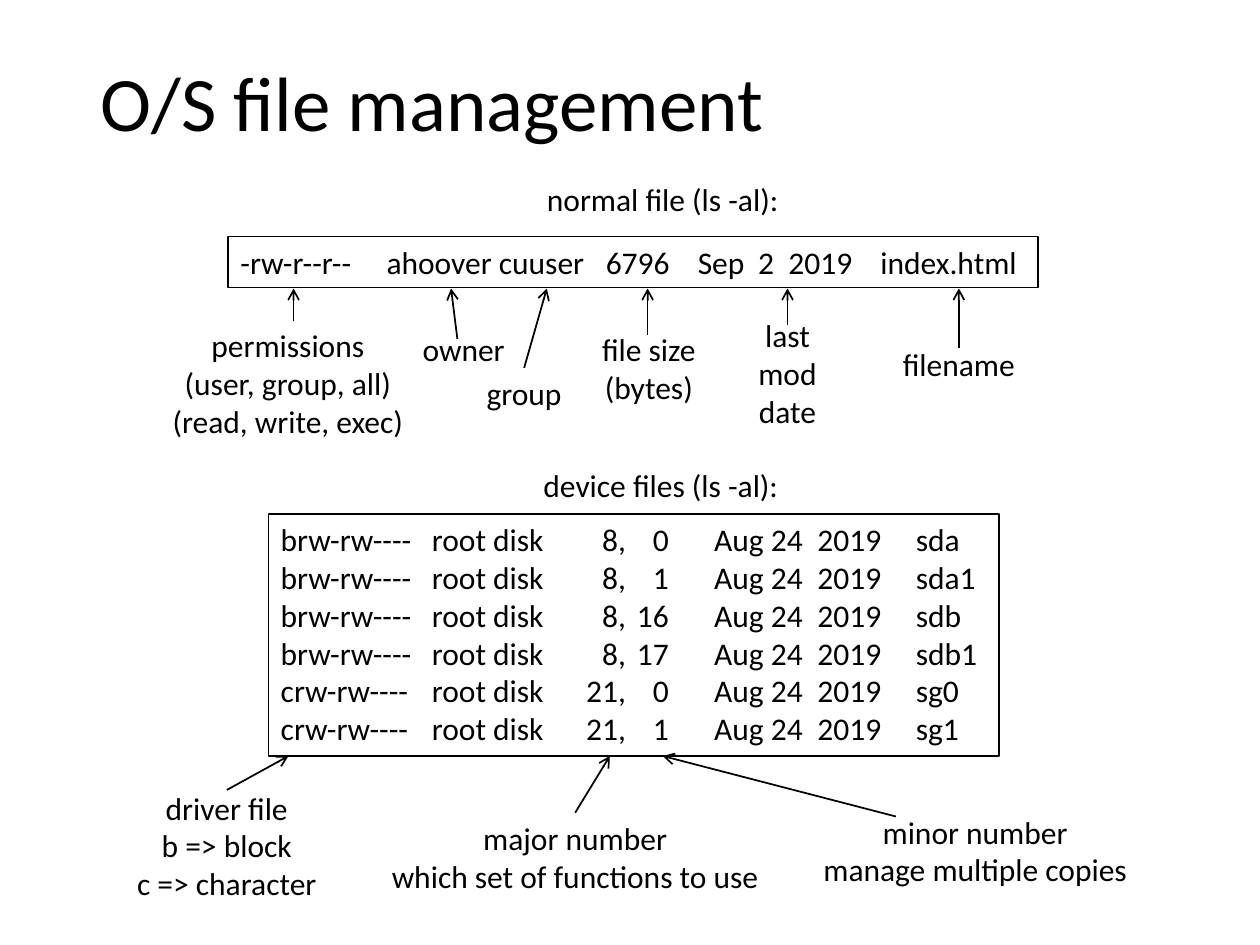
from lxml.etree import SubElement
from pptx import Presentation
from pptx.dml.color import RGBColor
from pptx.enum.shapes import MSO_CONNECTOR, MSO_SHAPE
from pptx.enum.text import MSO_ANCHOR, PP_ALIGN
from pptx.oxml.ns import qn
from pptx.util import Inches, Pt

FONT = "Calibri"
BLACK = "000000"
TITLE = "O/S file management"

# Heading, heading place, listing place, tab stops (inches, alignment), rows
LISTINGS = [
    ("normal file (ls -al):", (4.23, 1.38, 2.06, 0.4), (1.81, 1.88, 6.43, 0.4),
     [(1.16, "l"), (2.9, "l"), (3.63, "l"), (4.11, "l"), (4.35, "l"), (5.08, "l")],
     [("-rw-r--r--", "ahoover cuuser", "6796", "Sep", "2", "2019", "index.html")]),
    ("device files (ls -al):", (4.2, 3.65, 2.09, 0.4), (2.13, 4.08, 5.8, 1.92),
     [(1.2, "l"), (2.74, "r"), (3.08, "r"), (3.44, "l"), (4.26, "l"), (5.04, "l")],
     [("brw-rw----", "root disk", "8,", "0", "Aug 24", "2019", "sda"),
      ("brw-rw----", "root disk", "8,", "1", "Aug 24", "2019", "sda1"),
      ("brw-rw----", "root disk", "8,", "16", "Aug 24", "2019", "sdb"),
      ("brw-rw----", "root disk", "8,", "17", "Aug 24", "2019", "sdb1"),
      ("crw-rw----", "root disk", "21,", "0", "Aug 24", "2019", "sg0"),
      ("crw-rw----", "root disk", "21,", "1", "Aug 24", "2019", "sg1")]),
]

# Label lines, label place, arrow start (None: top middle of the label), arrow tip
ANNOTATIONS = [
    (["permissions", "(user, group, all)", "(read, write, exec)"],
     (1.26, 2.54, 2.05, 1.01), (2.33, 2.55), (2.33, 2.29)),
    (["owner"], (3.25, 2.57, 0.86, 0.4), (3.63, 2.69), (3.58, 2.29)),
    (["group"], (3.76, 2.92, 0.8, 0.4), None, (4.34, 2.29)),
    (["file size", "(bytes)"], (4.67, 2.57, 0.96, 0.71), (5.14, 2.66), (5.14, 2.29)),
    (["last", "mod", "date"], (5.91, 2.46, 0.68, 1.01), (6.25, 2.58), (6.25, 2.29)),
    (["filename"], (7.06, 2.69, 1.1, 0.4), (7.61, 2.76), (7.61, 2.29)),
    (["driver file", "b => block", "c => character"],
     (0.98, 6.21, 1.64, 1.01), (1.8, 6.27), (2.29, 6)),
    (["major number", "which set of functions to use"],
     (2.99, 6.45, 3.15, 0.71), None, (4.84, 6)),
    (["minor number", "manage multiple copies"],
     (6.42, 6.4, 2.64, 0.71), (7.11, 6.48), (5.26, 6)),
]


def color(hex_code):
    return RGBColor.from_string(hex_code)


def inches(values):
    return [Inches(value) for value in values]


def write(frame, lines, size=18, align=PP_ALIGN.CENTER):
    frame.word_wrap = False
    frame.text = "\n".join(lines)
    for paragraph in frame.paragraphs:
        paragraph.alignment = align
        paragraph.font.name = FONT
        paragraph.font.size = Pt(size)
        paragraph.font.color.rgb = color(BLACK)


def add_label(slide, lines, place):
    label = slide.shapes.add_textbox(*inches(place))
    write(label.text_frame, lines)
    return label


def set_tabs(paragraph, tabs):
    properties = paragraph._p.get_or_add_pPr()
    tab_list = SubElement(properties, qn("a:tabLst"))
    properties.insert(0, tab_list)
    for position, align in tabs:
        SubElement(tab_list, qn("a:tab"), pos=str(Inches(position)), algn=align)


def add_listing(slide, place, tabs, rows):
    box = slide.shapes.add_shape(MSO_SHAPE.RECTANGLE, *inches(place))
    box.shadow.inherit = False
    box.fill.background()
    box.line.color.rgb = color(BLACK)
    box.line.width = Pt(0.75)
    frame = box.text_frame
    frame.vertical_anchor = MSO_ANCHOR.TOP
    write(frame, ["\t".join(row) for row in rows], align=PP_ALIGN.LEFT)
    for paragraph in frame.paragraphs:
        set_tabs(paragraph, tabs)


def add_arrow(slide, label, start, tip):
    arrow = slide.shapes.add_connector(
        MSO_CONNECTOR.STRAIGHT, *inches(start or tip), *inches(tip))
    if start is None:
        arrow.begin_connect(label, 0)
    arrow.line.color.rgb = color(BLACK)
    arrow.line.width = Pt(1)
    SubElement(arrow.line._get_or_add_ln(), qn("a:tailEnd"), type="arrow")
    SubElement(arrow._element.spPr, qn("a:effectLst"))


def main():
    deck = Presentation()
    deck.slide_width, deck.slide_height = Inches(10), Inches(7.5)
    slide = deck.slides.add_slide(deck.slide_layouts[5])

    title = slide.shapes.title
    title.left, title.top, title.width, title.height = inches((0.67, 0.38, 5.52, 0.84))
    write(title.text_frame, [TITLE], size=44)

    for heading, heading_place, place, tabs, rows in LISTINGS:
        add_label(slide, [heading], heading_place)
        add_listing(slide, place, tabs, rows)
    for lines, place, start, tip in ANNOTATIONS:
        label = add_label(slide, lines, place)
        add_arrow(slide, label, start, tip)

    deck.save("out.pptx")


if __name__ == "__main__":
    main()
